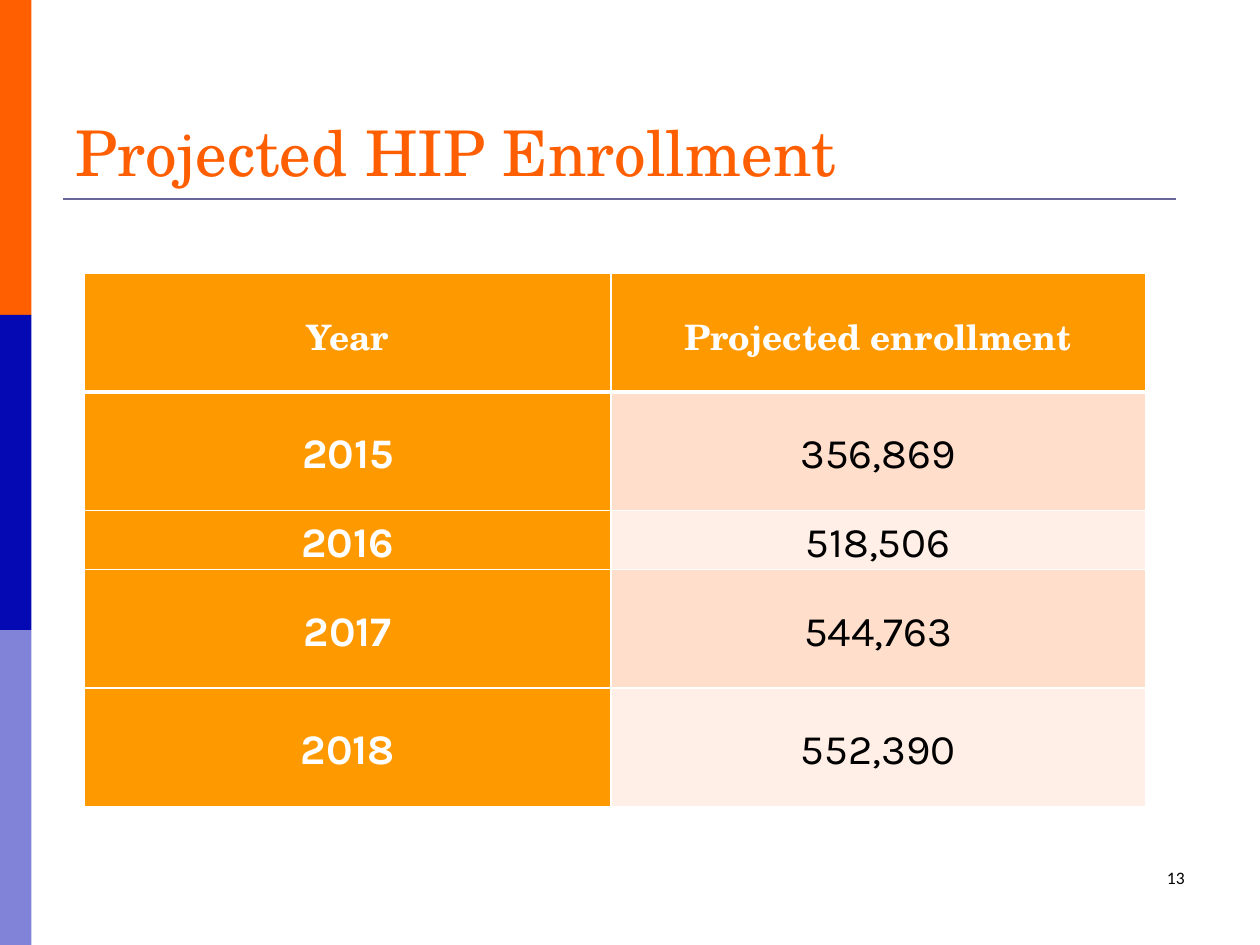
from lxml.etree import SubElement
from pptx import Presentation
from pptx.dml.color import RGBColor
from pptx.enum.shapes import MSO_CONNECTOR, MSO_SHAPE
from pptx.enum.text import MSO_ANCHOR, PP_ALIGN
from pptx.oxml.ns import qn
from pptx.util import Inches, Pt

ORANGE = RGBColor(0xFF, 0x5F, 0x00)
BLUE = RGBColor(0x05, 0x09, 0xB3)
RULE = RGBColor(0x66, 0x66, 0x99)
AMBER = RGBColor(0xFF, 0x99, 0x00)
PEACH = RGBColor(0xFF, 0xDE, 0xCC)
PALE_PEACH = RGBColor(0xFF, 0xEF, 0xE7)
WHITE = RGBColor(0xFF, 0xFF, 0xFF)
BLACK = RGBColor(0x00, 0x00, 0x00)

SERIF = "TeX Gyre Schola"
SANS = "Karla"
ENROLLMENT = [
    ("Year", "Projected enrollment"),
    ("2015", "356,869"),
    ("2016", "518,506"),
    ("2017", "544,763"),
    ("2018", "552,390"),
]
COLUMN_WIDTHS = [4.18, 4.24]
ROW_HEIGHTS = [0.94, 0.94, 0.47, 0.94, 0.94]


def style_paragraph(paragraph, face, size, color, align, bold=False):
    """Set the alignment and font of a paragraph."""
    paragraph.alignment = align
    font = paragraph.font
    font.name, font.size, font.bold = face, Pt(size), bold
    font.color.rgb = color


def add_side_bar(slide, position, color, opacity=100):
    """Add one third of the coloured strip on the left edge."""
    height = 2.5
    bar = slide.shapes.add_shape(
        MSO_SHAPE.RECTANGLE, 0, Inches(position * height), Inches(0.25), Inches(height))
    bar.shadow.inherit = False
    bar.line.fill.background()
    bar.fill.solid()
    bar.fill.fore_color.rgb = color
    if opacity < 100:
        fill_color = bar.fill._xPr.find(qn("a:solidFill"))[0]
        SubElement(fill_color, qn("a:alpha"), val=str(opacity * 1000))


def add_title_rule(slide):
    """Add the line under the title."""
    rule = slide.shapes.add_connector(
        MSO_CONNECTOR.STRAIGHT, Inches(0.5), Inches(1.58), Inches(9.33), Inches(1.58))
    rule.line.color.rgb = RULE
    rule.line.width = Pt(1.5)
    SubElement(rule._element.spPr, qn("a:effectLst"))


def set_title(slide, text):
    """Fill and place the title placeholder."""
    title = slide.shapes.title
    title.left, title.top = Inches(0.5), Inches(0.3)
    title.width, title.height = Inches(9), Inches(1.25)
    title.text_frame.text = text
    title.text_frame.vertical_anchor = MSO_ANCHOR.BOTTOM
    style_paragraph(title.text_frame.paragraphs[0], SERIF, 36, ORANGE, PP_ALIGN.LEFT)


def add_page_number(slide, number):
    """Add the page number at the lower right."""
    box = slide.shapes.add_textbox(Inches(7.17), Inches(6.83), Inches(2.33), Inches(0.5))
    box.text_frame.word_wrap = True
    box.text_frame.text = number
    style_paragraph(box.text_frame.paragraphs[0], "Calibri", 10, BLACK, PP_ALIGN.RIGHT)


def set_borders(cell, widths):
    """Draw white borders on a cell, given a width in points for each side."""
    properties = cell._tc.get_or_add_tcPr()
    for side, width in widths.items():
        border = SubElement(properties, qn(f"a:ln{side}"), w=str(Pt(width)))
        fill = SubElement(border, qn("a:solidFill"))
        SubElement(fill, qn("a:srgbClr"), val=str(WHITE))


def fill_cell(cell, text, row, column):
    """Write and style a cell according to its place in the table."""
    is_header = row == 0
    is_label = is_header or column == 0
    set_borders(cell, {"L": 1, "R": 1, "T": 3 if row == 1 else 1, "B": 3 if is_header else 1})
    cell.fill.solid()
    cell.fill.fore_color.rgb = AMBER if is_label else PEACH if row % 2 else PALE_PEACH
    cell.vertical_anchor = MSO_ANCHOR.MIDDLE
    cell.margin_left = cell.margin_right = Inches(0.07)
    cell.margin_top = cell.margin_bottom = 0
    cell.text = text
    paragraph = cell.text_frame.paragraphs[0]
    paragraph.line_spacing = 1.15
    face, size = (SERIF, 20) if is_header else (SANS, 24)
    style_paragraph(paragraph, face, size, WHITE if is_label else BLACK,
                    PP_ALIGN.CENTER, is_label)


def add_enrollment_table(slide):
    """Add the table of projected enrollment by year."""
    table = slide.shapes.add_table(
        len(ENROLLMENT), len(COLUMN_WIDTHS), Inches(0.67), Inches(2.17),
        Inches(sum(COLUMN_WIDTHS)), Inches(sum(ROW_HEIGHTS))).table
    for column, width in zip(table.columns, COLUMN_WIDTHS):
        column.width = Inches(width)
    for table_row, height in zip(table.rows, ROW_HEIGHTS):
        table_row.height = Inches(height)
    for row, values in enumerate(ENROLLMENT):
        for column, text in enumerate(values):
            fill_cell(table.cell(row, column), text, row, column)


def main():
    """Build and save the slide."""
    presentation = Presentation()
    presentation.slide_width, presentation.slide_height = Inches(10), Inches(7.5)
    slide = presentation.slides.add_slide(presentation.slide_layouts[5])
    add_side_bar(slide, 0, ORANGE)
    add_title_rule(slide)
    add_side_bar(slide, 1, BLUE)
    add_side_bar(slide, 2, BLUE, opacity=50)
    set_title(slide, "Projected HIP Enrollment")
    add_page_number(slide, "13")
    add_enrollment_table(slide)
    presentation.save("out.pptx")


if __name__ == "__main__":
    main()
